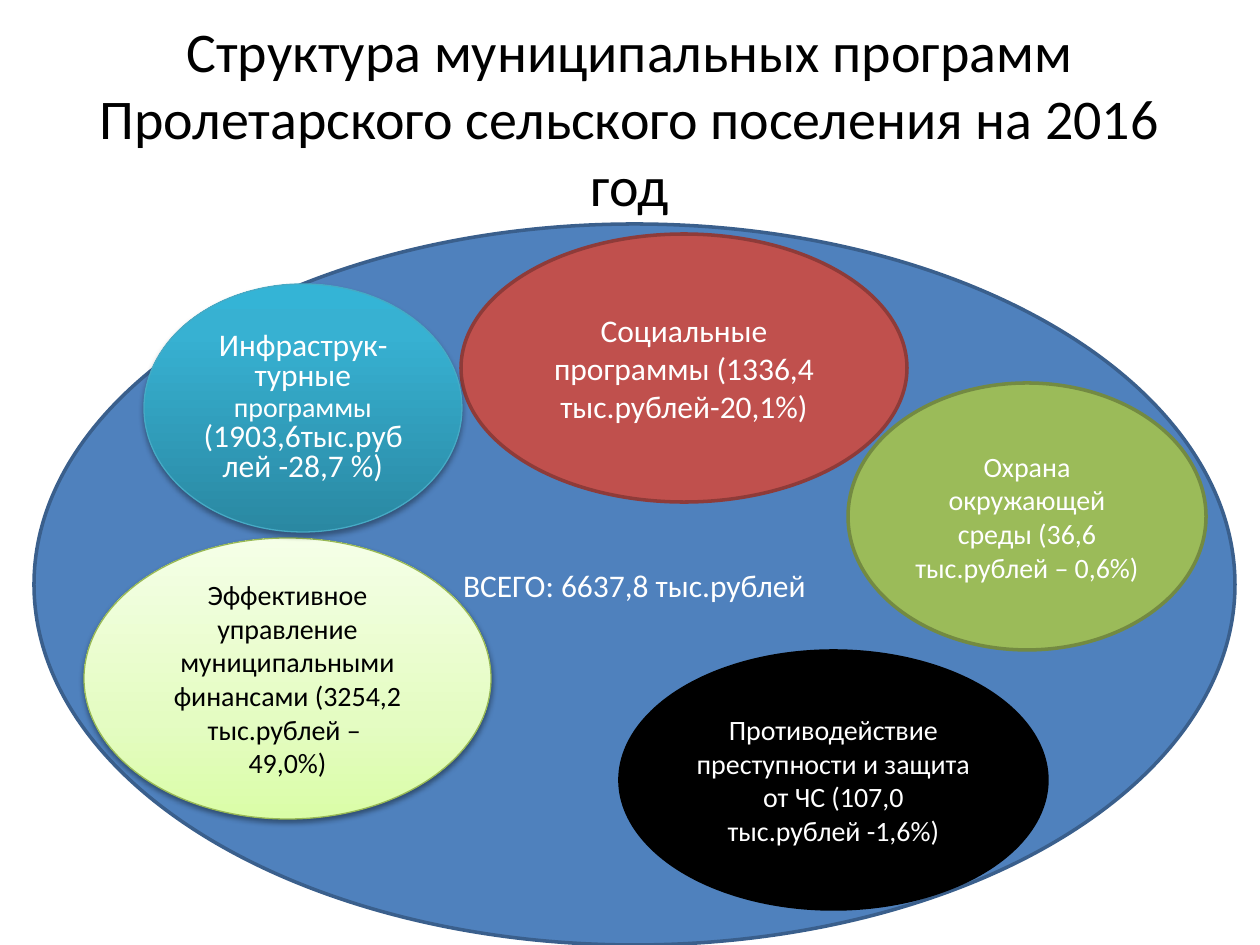
from dataclasses import dataclass
from typing import Optional

from lxml.etree import SubElement
from pptx import Presentation
from pptx.dml.color import RGBColor
from pptx.enum.shapes import MSO_SHAPE
from pptx.enum.text import MSO_ANCHOR, MSO_AUTO_SIZE, PP_ALIGN
from pptx.oxml.ns import qn
from pptx.util import Emu, Pt

DPI = 126


@dataclass(frozen=True)
class Theme:
    font: str = "Calibri"
    white: str = "FFFFFF"
    black: str = "000000"
    blue: str = "4F81BD"
    navy: str = "3A5F8C"
    red: str = "C0504D"
    wine: str = "8E3B39"
    green: str = "9BBB59"
    olive: str = "738A42"
    leaf: str = "98B955"
    aqua: str = "46AAC5"
    lime: tuple = ((0, "DAFDA7"), (35, "E4FCC2"), (100, "F5FFE7"))
    teal: tuple = ((0, "2A88A2"), (80, "37B1D2"), (100, "34B4D6"))
    head: int = 32
    large: int = 18
    small: int = 16


THEME = Theme()


@dataclass(frozen=True)
class Shade:
    alpha: int
    blur: float
    gap: float


@dataclass(frozen=True)
class Oval:
    box: tuple[int, int, int, int]
    fill: str | tuple
    line: str
    text: tuple[str, ...]  # one paragraph each; "|" parts the runs
    sizes: tuple[int, ...] = (THEME.small,)  # one per run, in turn
    ink: str = THEME.white
    width: float = 2
    space: Optional[float] = None
    shade: Optional[Shade] = None


OVALS = (
    Oval((34, 224, 1201, 721), THEME.blue, THEME.navy,
         ("ВСЕГО: 6637,8 тыс.рублей",), (THEME.large,)),
    Oval((461, 234, 446, 268), THEME.red, THEME.wine,
         ("Социальные программы (1336,4 тыс.рублей-20,1%)",), (THEME.large,)),
    Oval((848, 383, 358, 267), THEME.green, THEME.olive,
         ("Охрана окружающей среды (36,6 тыс.рублей – 0,6%)",)),
    Oval((620, 651, 427, 258), THEME.black, THEME.black,
         ("Противодействие преступности и защита от ЧС (107,0",
          "тыс.рублей -1,6%)")),
    Oval((84, 538, 407, 281), THEME.lime, THEME.leaf,
         ("Эффективное управление муниципальными финансами (3254,2 тыс.рублей – ",
          "49,0%)"),
         ink=THEME.black, width=0.75, shade=Shade(38, 3.1, 1.6)),
    Oval((144, 284, 318, 248), THEME.teal, THEME.aqua,
         ("Инфраструк-турные |программы| (1903,6тыс.рублей -28,7 %)",),
         (THEME.large, THEME.small, THEME.large),
         width=0.75, space=0.8, shade=Shade(35, 3.1, 1.8)),
)


def px(num: int) -> Emu:
    return Emu(round(num * 914400 / DPI))


def style(run, size: int, ink: str) -> None:
    run.font.name = THEME.font
    run.font.size = Pt(size)
    run.font.color.rgb = RGBColor.from_string(ink)


def paint(shape, stops: tuple) -> None:
    """Fill upward, from the first stop at the foot to the last at the top."""
    shape.fill.gradient()
    grad = shape._element.spPr.find(qn("a:gradFill"))
    for node in list(grad):
        grad.remove(node)
    band = SubElement(grad, qn("a:gsLst"))
    for pos, tint in stops:
        stop = SubElement(band, qn("a:gs"), pos=str(pos * 1000))
        SubElement(stop, qn("a:srgbClr"), val=tint)
    SubElement(grad, qn("a:lin"), ang="16200000", scaled="0")


def cast(shape, shade: Shade) -> None:
    """Drop a soft shadow straight down."""
    effects = shape._element.spPr.find(qn("a:effectLst"))
    drop = SubElement(effects, qn("a:outerShdw"), blurRad=str(Pt(shade.blur)),
                      dist=str(Pt(shade.gap)), dir="5400000", rotWithShape="0")
    tint = SubElement(drop, qn("a:srgbClr"), val=THEME.black)
    SubElement(tint, qn("a:alpha"), val=str(shade.alpha * 1000))


def write(frame, oval: Oval) -> None:
    frame.word_wrap = True
    frame.vertical_anchor = MSO_ANCHOR.MIDDLE
    frame.text = "\n".join(line.split("|")[0] for line in oval.text)
    for para, line in zip(frame.paragraphs, oval.text):
        para.alignment = PP_ALIGN.CENTER
        if oval.space:
            para.line_spacing = oval.space
        for part in line.split("|")[1:]:
            para.add_run().text = part
        for run, size in zip(para.runs, oval.sizes):
            style(run, size, oval.ink)


def draw(slide, oval: Oval) -> None:
    shape = slide.shapes.add_shape(MSO_SHAPE.OVAL, *map(px, oval.box))
    shape.shadow.inherit = False
    if isinstance(oval.fill, str):
        shape.fill.solid()
        shape.fill.fore_color.rgb = RGBColor.from_string(oval.fill)
    else:
        paint(shape, oval.fill)
    shape.line.color.rgb = RGBColor.from_string(oval.line)
    shape.line.width = Pt(oval.width)
    if oval.shade:
        cast(shape, oval.shade)
    write(shape.text_frame, oval)


def name(slide, text: str) -> None:
    title = slide.shapes.title
    title.left, title.top, title.width, title.height = map(px, (63, 38, 1134, 158))
    frame = title.text_frame
    frame.text = text
    frame.word_wrap = True
    frame.auto_size = MSO_AUTO_SIZE.NONE
    frame.vertical_anchor = MSO_ANCHOR.MIDDLE
    para = frame.paragraphs[0]
    para.alignment = PP_ALIGN.CENTER
    style(para.runs[0], THEME.head, THEME.black)


def main() -> None:
    deck = Presentation()
    deck.slide_width, deck.slide_height = px(1260), px(945)
    slide = deck.slides.add_slide(deck.slide_layouts[5])
    # Heading
    name(slide, "Структура муниципальных программ Пролетарского сельского "
                "поселения на 2016 год")
    # The whole budget, then its programmes, back to front
    for oval in OVALS:
        draw(slide, oval)
    deck.save("out.pptx")


if __name__ == "__main__":
    main()
